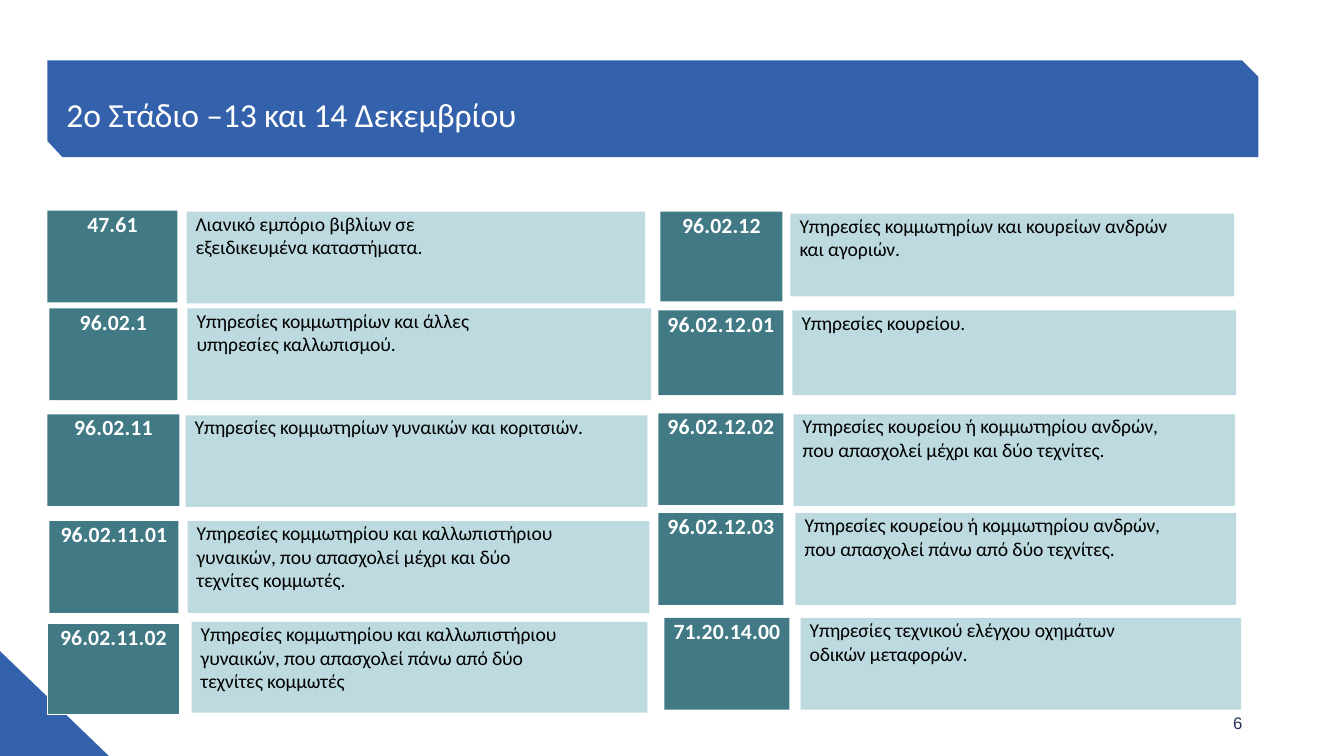
from dataclasses import dataclass

from pptx import Presentation
from pptx.dml.color import RGBColor
from pptx.enum.shapes import MSO_SHAPE
from pptx.enum.text import MSO_ANCHOR, PP_ALIGN
from pptx.util import Inches, Pt

UNIT = 0.1  # one grid column or row, in inches
COLS, ROWS = 133.3, 75


@dataclass(frozen=True)
class Theme:
    blue: str = "3461AB"
    teal: str = "417A85"
    pale: str = "BCDADF"
    white: str = "FFFFFF"
    black: str = "000000"
    navy: str = "243355"
    text_font: str = "Calibri"
    number_font: str = "Arial"
    title_size: float = 24
    code_size: float = 15.5
    body_size: float = 14
    number_size: float = 12


@dataclass(frozen=True)
class Box:
    """Left, top, width and height in grid units."""
    x: float
    y: float
    w: float
    h: float


@dataclass(frozen=True)
class Activity:
    code: str
    text: str
    code_box: Box
    text_box: Box
    right: float = 0  # right inset that sets the line break
    outline: bool = False


THEME = Theme()

ACTIVITIES = [
    # Left column
    Activity("47.61", "Λιανικό εμπόριο βιβλίων σε εξειδικευμένα καταστήματα.",
             Box(4.7, 20.9, 12.9, 9.1), Box(18.5, 21, 45.5, 9.1), 15),
    Activity("96.02.1", "Υπηρεσίες κομμωτηρίων και άλλες υπηρεσίες καλλωπισμού.",
             Box(4.9, 30.6, 12.7, 9.1), Box(18.6, 30.6, 46, 9.1), 12.5),
    Activity("96.02.11", "Υπηρεσίες κομμωτηρίων γυναικών και κοριτσιών.",
             Box(4.7, 41.1, 13.1, 9.1), Box(18.4, 41.2, 45.8, 9.1)),
    Activity("96.02.11.01", "Υπηρεσίες κομμωτηρίου και καλλωπιστήριου γυναικών, "
             "που απασχολεί μέχρι και δύο τεχνίτες κομμωτές.",
             Box(4.9, 51.7, 12.8, 9.1), Box(18.6, 51.7, 45.8, 9.1), 7.3),
    Activity("96.02.11.02", "Υπηρεσίες κομμωτηρίου και καλλωπιστήριου γυναικών, "
             "που απασχολεί πάνω από δύο τεχνίτες κομμωτές",
             Box(4.7, 61.9, 13.1, 9), Box(19, 61.7, 45.2, 9), 6.7, True),
    # Right column
    Activity("96.02.12", "Υπηρεσίες κομμωτηρίων και κουρείων ανδρών και αγοριών.",
             Box(65.5, 21, 12.1, 8.9), Box(78.4, 21.2, 44, 8.2), 4),
    Activity("96.02.12.01", "Υπηρεσίες κουρείου.",
             Box(65.3, 30.8, 12.4, 8.4), Box(78.6, 30.8, 44, 8.4)),
    Activity("96.02.12.02", "Υπηρεσίες κουρείου ή κομμωτηρίου ανδρών, "
             "που απασχολεί μέχρι και δύο τεχνίτες.",
             Box(65.3, 41, 12.4, 9.1), Box(78.7, 41.1, 43.8, 9.1), 5),
    Activity("96.02.12.03", "Υπηρεσίες κουρείου ή κομμωτηρίου ανδρών, "
             "που απασχολεί πάνω από δύο τεχνίτες.",
             Box(65.3, 50.9, 12.4, 9.1), Box(78.9, 50.9, 43.7, 9.1), 5),
    Activity("71.20.14.00", "Υπηρεσίες τεχνικού ελέγχου οχημάτων οδικών μεταφορών.",
             Box(65.9, 61.3, 12.4, 9.1), Box(79.4, 61.3, 43.7, 9.1), 9),
]


def grid(n: float) -> int:
    return Inches(n * UNIT)


def paint(sp, fill: str) -> None:
    sp.shadow.inherit = False
    sp.fill.solid()
    sp.fill.fore_color.rgb = RGBColor.from_string(fill)
    sp.line.fill.background()


def add_outline(s, points: list[tuple[float, float]], fill: str) -> None:
    start, *rest = [(grid(x), grid(y)) for x, y in points]
    builder = s.shapes.build_freeform(*start)
    builder.add_line_segments(rest, close=True)
    paint(builder.convert_to_shape(), fill)


def write(sp, text: str, size: float, color: str, font: str = THEME.text_font,
          bold: bool = False, align: PP_ALIGN = PP_ALIGN.LEFT,
          left: float = 0, right: float = 0, spacing: int = 0) -> None:
    tf = sp.text_frame
    frame_format = {"word_wrap": True, "vertical_anchor": MSO_ANCHOR.TOP,
                    "margin_left": grid(left), "margin_right": grid(right),
                    "margin_top": 0, "margin_bottom": 0}
    for name, value in frame_format.items():
        setattr(tf, name, value)
    p = tf.paragraphs[0]
    p.alignment = align
    r = p.add_run()
    r.text = text
    for name, value in {"name": font, "size": Pt(size), "bold": bold}.items():
        setattr(r.font, name, value)
    r.font.color.rgb = RGBColor.from_string(color)
    if spacing:
        r.font._element.set("spc", str(spacing))


def add_box(s, box: Box, fill: str | None = None):
    place = [grid(n) for n in (box.x, box.y, box.w, box.h)]
    if fill is None:
        return s.shapes.add_textbox(*place)
    sp = s.shapes.add_shape(MSO_SHAPE.RECTANGLE, *place)
    paint(sp, fill)
    return sp


def add_activity(s, activity: Activity) -> None:
    sp = add_box(s, activity.code_box, THEME.teal)
    if activity.outline:
        sp.line.color.rgb = RGBColor.from_string(THEME.white)
        sp.line.width = Pt(0.75)
    write(sp, activity.code, THEME.code_size, THEME.white, bold=True,
          align=PP_ALIGN.CENTER, spacing=10)
    sp = add_box(s, activity.text_box, THEME.pale)
    write(sp, activity.text, THEME.body_size, THEME.black,
          left=0.9, right=activity.right, spacing=-10)


def main() -> None:
    prs = Presentation()
    prs.slide_width, prs.slide_height = grid(COLS), grid(ROWS)
    s = prs.slides.add_slide(prs.slide_layouts[6])

    # Corner triangle and title banner
    add_outline(s, [(0, 64.6), (0, ROWS), (10.8, ROWS)], THEME.blue)
    add_outline(s, [(123.2, 6), (4.7, 6), (4.7, 14), (6.2, 15.6),
                    (124.8, 15.6), (124.8, 7.6)], THEME.blue)
    write(add_box(s, Box(6.5, 9.3, 120.3, 3.6)), "2ο Στάδιο –13 και 14 Δεκεμβρίου",
          THEME.title_size, THEME.white, left=0.1, spacing=-10)

    # Activity codes with their descriptions
    for activity in ACTIVITIES:
        add_activity(s, activity)

    # Page number
    write(add_box(s, Box(122, 70.7, 1.5, 1.9)), "6", THEME.number_size,
          THEME.navy, THEME.number_font, left=0.3)

    prs.save("out.pptx")


if __name__ == "__main__":
    main()
